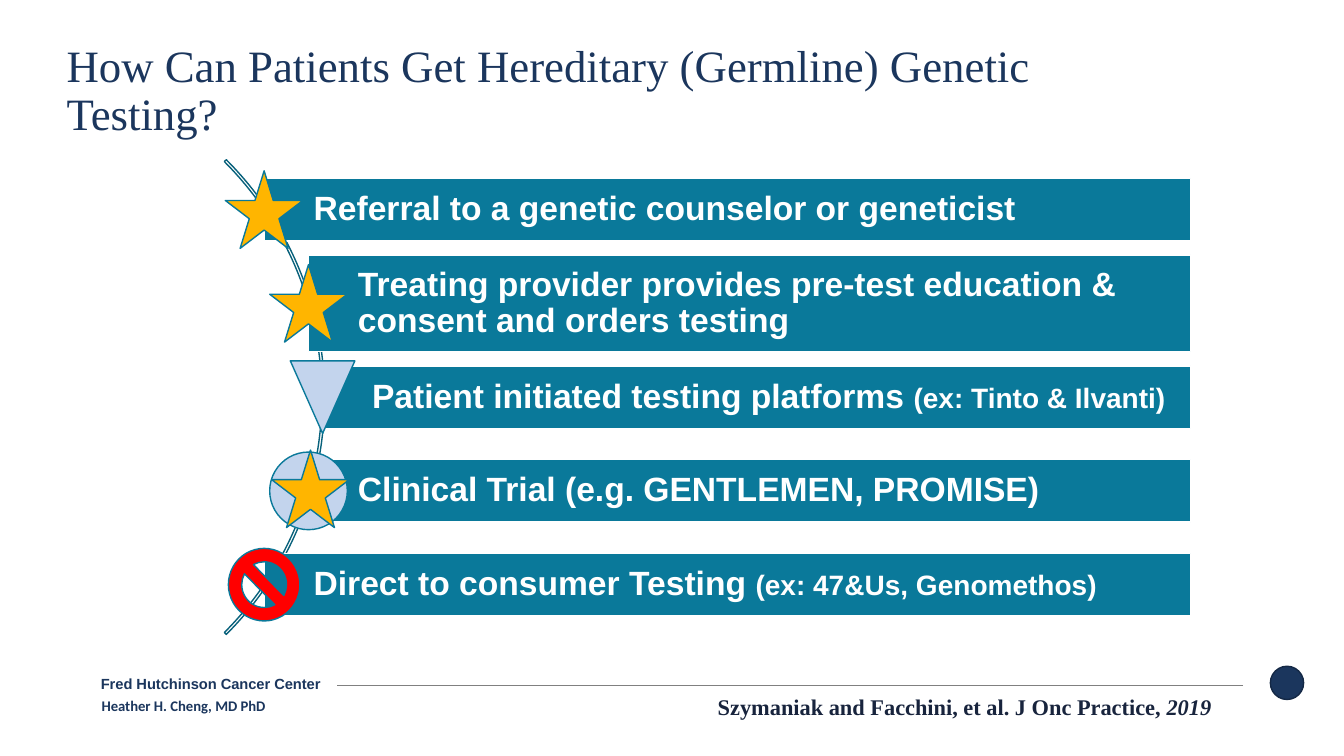
from dataclasses import dataclass

from lxml.etree import SubElement
from pptx import Presentation
from pptx.dml.color import RGBColor
from pptx.enum.shapes import MSO_CONNECTOR as Connector, MSO_SHAPE as Shape
from pptx.enum.text import MSO_ANCHOR as Anchor, PP_ALIGN as Align
from pptx.oxml.ns import qn
from pptx.util import Inches, Pt

COLORS = {
    "navy": "1B365D",
    "navy_edge": "142845",
    "ink": "18243D",
    "teal": "0A799A",
    "arc": "08617B",
    "gold": "FFB500",
    "pale": "C3D4ED",
    "red": "FF0000",
    "rule": "808080",
    "white": "FFFFFF",
}
BAR_RIGHT = 11.81
FIRST_CENTER = 2.08
PITCH = 0.93


@dataclass(frozen=True)
class Run:
    text: str
    size: float
    color: str
    font: str = "Arial"
    bold: bool = True
    italic: bool = False


@dataclass(frozen=True)
class Icon:
    kind: Shape
    fill: str
    width: float = 0.77
    height: float = 0.77


@dataclass(frozen=True)
class Option:
    left: float
    height: float
    icon: Icon
    text: str
    example: str = ""


@dataclass(frozen=True)
class Label:
    box: tuple[float, float, float, float]
    runs: tuple[Run, ...]
    anchor: Anchor = Anchor.TOP
    insets: tuple[float, float, float, float] = (0.1, 0.05, 0.1, 0.05)
    spacing: float = 1.0


STAR = Icon(Shape.STAR_5_POINT, "gold")
OPTIONS = (
    Option(2.62, 0.62, STAR, "Referral to a genetic counselor or geneticist"),
    Option(3.06, 0.96, STAR,
           "Treating provider provides pre-test education & consent and orders testing"),
    Option(3.2, 0.62, Icon(Shape.FLOWCHART_MERGE, "pale", 0.64, 0.72),
           "Patient initiated testing platforms ", "(ex: Tinto & Ilvanti)"),
    Option(3.06, 0.62, Icon(Shape.OVAL, "pale"), "Clinical Trial (e.g. GENTLEMEN, PROMISE)"),
    Option(2.62, 0.62, Icon(Shape.NO_SYMBOL, "red", 0.71, 0.72),
           "Direct to consumer Testing ", "(ex: 47&Us, Genomethos)"),
)
NO_INSETS = (0, 0, 0, 0)
LABELS = (
    Label((1, 6.58, 3.27, 0.4), (Run("Fred Hutchinson Cancer Center", 10.5, "navy"),),
          Anchor.MIDDLE, NO_INSETS),
    Label((7.02, 6.83, 5.21, 0.37), (
        Run("Szymaniak and Facchini, et al. J Onc Practice, ", 16, "ink", "Times New Roman"),
        Run("2019", 16, "ink", "Times New Roman", italic=True))),
    Label((0.66, 0.28, 11.01, 1.27), (
        Run("How Can Patients Get Hereditary (Germline) Genetic Testing?", 32, "navy",
            "Times New Roman", bold=False),), Anchor.MIDDLE, NO_INSETS, 0.9),
    Label((0.91, 6.88, 10.54, 0.29),
          (Run("Heather H. Cheng, MD PhD", 10.5, "navy", "Calibri"),), spacing=0.9),
)


def rgb(name: str) -> RGBColor:
    return RGBColor.from_string(COLORS[name])


def add_figure(slide, kind: Shape, box: tuple, fill: str | None, line: str):
    shape = slide.shapes.add_shape(kind, *map(Inches, box))
    shape.shadow.inherit = False
    if fill:
        shape.fill.solid()
        shape.fill.fore_color.rgb = rgb(fill)
    else:
        shape.fill.background()
    shape.line.color.rgb = rgb(line)
    shape.line.width = Pt(1)
    return shape


def write_text(shape, runs: tuple[Run, ...], anchor: Anchor, insets: tuple,
               spacing: float) -> None:
    frame = shape.text_frame
    frame.word_wrap = True
    frame.vertical_anchor = anchor
    (frame.margin_left, frame.margin_top,
     frame.margin_right, frame.margin_bottom) = map(Inches, insets)
    paragraph = frame.paragraphs[0]
    paragraph.alignment = Align.LEFT
    paragraph.line_spacing = spacing
    for item in runs:
        run = paragraph.add_run()
        run.text = item.text
        run.font.name = item.font
        run.font.size = Pt(item.size)
        run.font.bold = item.bold
        run.font.italic = item.italic
        run.font.color.rgb = rgb(item.color)


def add_icon(slide, icon: Icon, center_x: float, center_y: float) -> None:
    box = (center_x - icon.width / 2, center_y - icon.height / 2, icon.width, icon.height)
    add_figure(slide, icon.kind, box, icon.fill, "teal")


def add_option(slide, option: Option, center_y: float) -> None:
    box = (option.left, center_y - option.height / 2, BAR_RIGHT - option.left, option.height)
    bar = add_figure(slide, Shape.RECTANGLE, box, "teal", "white")
    runs = (Run(option.text, 24, "white"),)
    if option.example:
        runs += (Run(option.example, 20, "white"),)
    write_text(bar, runs, Anchor.MIDDLE, (0.49, 0.07, 0.07, 0.07), 0.9)
    add_icon(slide, option.icon, option.left, center_y)


def add_label(slide, label: Label) -> None:
    box = slide.shapes.add_textbox(*map(Inches, label.box))
    write_text(box, label.runs, label.anchor, label.insets, label.spacing)


def add_footer_rule(slide) -> None:
    rule = slide.shapes.add_connector(
        Connector.STRAIGHT, Inches(12.33), Inches(6.8), Inches(3.34), Inches(6.8))
    rule.line.color.rgb = rgb("rule")
    rule.line.width = Pt(0.75)
    SubElement(rule._element.spPr, qn("a:effectLst"))


def main() -> None:
    presentation = Presentation()
    presentation.slide_width = Inches(13.33)
    presentation.slide_height = Inches(7.5)
    slide = presentation.slides.add_slide(presentation.slide_layouts[6])

    add_figure(slide, Shape.OVAL, (12.6, 6.61, 0.33, 0.33), "navy", "navy_edge")
    add_footer_rule(slide)
    arc = add_figure(slide, Shape.BLOCK_ARC, (-3.44, 0.61, 6.66, 6.66), None, "arc")
    for index, value in enumerate((189, 27, 0.004)):
        arc.adjustments[index] = value

    for index, option in enumerate(OPTIONS):
        add_option(slide, option, FIRST_CENTER + index * PITCH)
    add_icon(slide, STAR, 3.08, 4.85)
    for label in LABELS:
        add_label(slide, label)
    presentation.save("out.pptx")


if __name__ == "__main__":
    main()
